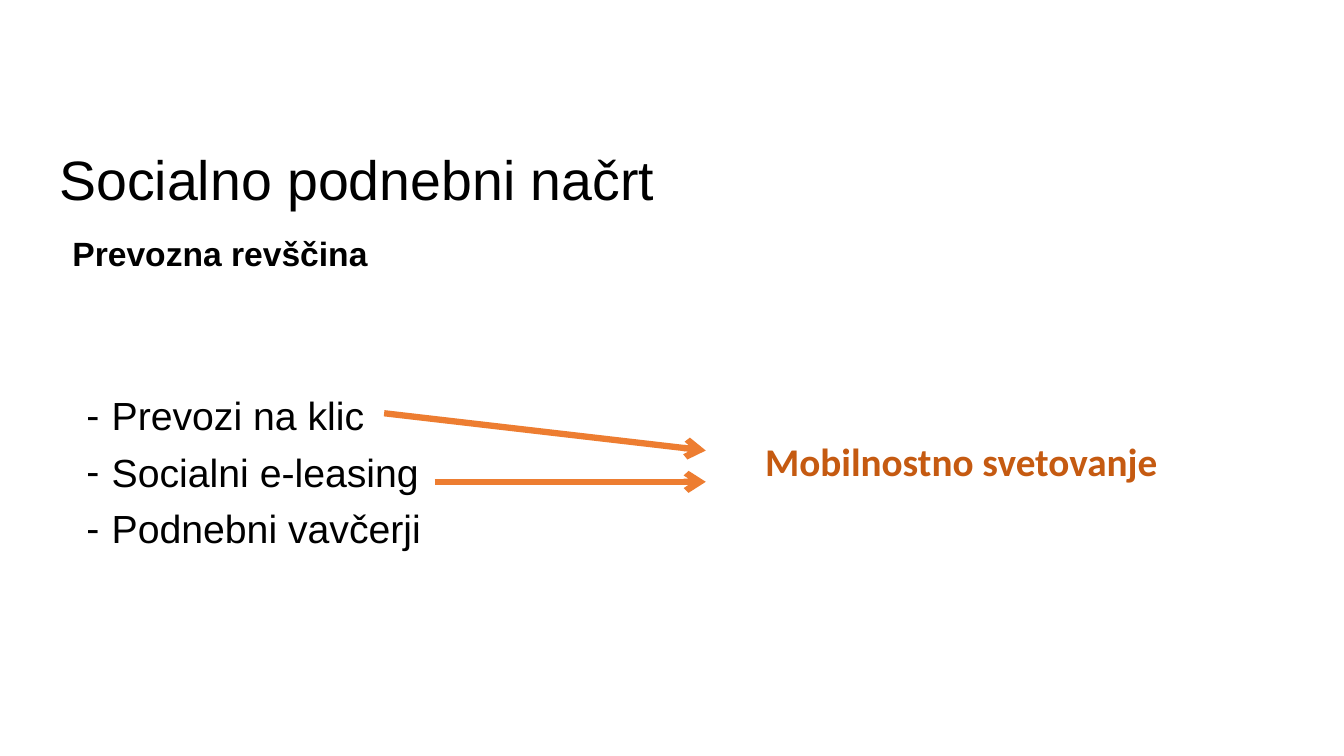
import pptx
import pptx.util
import pptx.dml.color
import pptx.enum.shapes
import pptx.enum.text
import pptx.oxml.ns
from lxml import etree

Inches, Pt = pptx.util.Inches, pptx.util.Pt
RGBColor = pptx.dml.color.RGBColor
Anchor = pptx.enum.text.MSO_ANCHOR
qn = pptx.oxml.ns.qn

BLACK = RGBColor(0x00, 0x00, 0x00)
ORANGE = RGBColor(0xED, 0x7D, 0x31)
DARK_ORANGE = RGBColor(0xC5, 0x5A, 0x11)

# Content: lines, box (left, top, width, height), layout and font
TEXTS = [
    {"lines": ["Socialno podnebni načrt"], "box": (0.49, 1.44, 8.83, 0.74),
     "anchor": Anchor.MIDDLE, "spacing": 0.9,
     "font": {"name": "Arial", "size": Pt(39.6)}, "color": BLACK},
    {"lines": ["Prevozna revščina"], "box": (0.62, 2.21, 5.64, 0.55),
     "anchor": Anchor.BOTTOM, "spacing": 0.9,
     "font": {"name": "Arial", "size": Pt(24), "bold": True}, "color": BLACK},
    {"lines": ["Prevozi na klic", "Socialni e-leasing", "Podnebni vavčerji"],
     "box": (0.76, 3.89, 5.64, 3.5),
     "anchor": Anchor.TOP, "spacing": 0.9, "bullet": "-",
     "font": {"name": "Arial", "size": Pt(28)}, "color": BLACK},
    {"lines": ["Mobilnostno svetovanje"], "box": (7.49, 4.29, 4.91, 0.57),
     "anchor": Anchor.TOP, "spacing": 1.0,
     "font": {"name": "Calibri", "size": Pt(28), "bold": True}, "color": DARK_ORANGE},
]
ARROW_TIP = 7
ARROWS = [(3.81, 4.1, 4.47), (4.31, 4.78, 4.78)]  # start x, start y, end y


def add_bullet(paragraph, character):
    properties = paragraph._p.get_or_add_pPr()
    properties.set("marL", str(Inches(0.25)))
    properties.set("indent", str(-Inches(0.25)))
    etree.SubElement(properties, qn("a:buFont")).set("typeface", "Arial")
    etree.SubElement(properties, qn("a:buChar")).set("char", character)


def add_text(slide, text):
    shape = slide.shapes.add_textbox(*map(Inches, text["box"]))
    frame = shape.text_frame
    frame.word_wrap = True
    frame.vertical_anchor = text["anchor"]
    for index, line in enumerate(text["lines"]):
        paragraph = frame.paragraphs[0] if index == 0 else frame.add_paragraph()
        paragraph.line_spacing = text["spacing"]
        if index:
            paragraph.space_before = Pt(10)
        if "bullet" in text:
            add_bullet(paragraph, text["bullet"])
        run = paragraph.add_run()
        run.text = line
        for name, value in text["font"].items():
            setattr(run.font, name, value)
        run.font.color.rgb = text["color"]


def add_arrow(slide, start_x, start_y, end_y):
    connector = slide.shapes.add_connector(
        pptx.enum.shapes.MSO_CONNECTOR.STRAIGHT,
        *map(Inches, (start_x, start_y, ARROW_TIP, end_y)))
    connector.line.color.rgb = ORANGE
    connector.line.width = Pt(4.5)
    line = connector.line._get_or_add_ln()
    etree.SubElement(line, qn("a:tailEnd")).set("type", "arrow")
    etree.SubElement(connector._element.spPr, qn("a:effectLst"))


def main():
    presentation = pptx.Presentation()
    presentation.slide_width = Inches(13.33)
    presentation.slide_height = Inches(7.5)
    slide = presentation.slides.add_slide(presentation.slide_layouts[6])

    # Headings, measures and the shared outcome
    for text in TEXTS:
        add_text(slide, text)

    # Arrows from the measures to the outcome
    for arrow in ARROWS:
        add_arrow(slide, *arrow)

    presentation.save("out.pptx")


if __name__ == "__main__":
    main()
